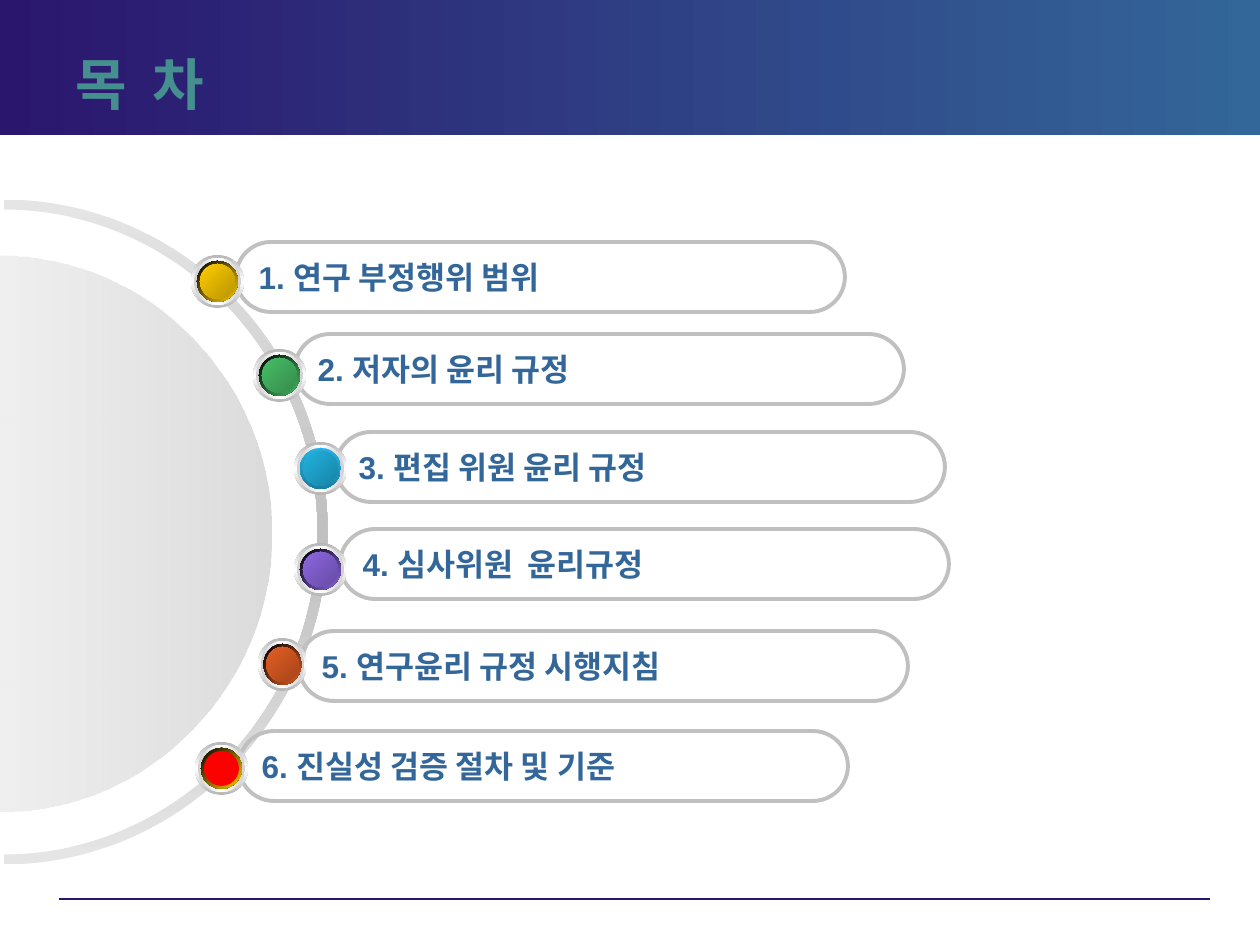
import pptx
import pptx.dml.color
import pptx.enum.shapes
import pptx.enum.text
import pptx.oxml
import pptx.oxml.ns
import pptx.util

PX = 914400 // 126
KIND = pptx.enum.shapes.MSO_SHAPE
SPACE = pptx.oxml.ns.nsdecls("a")
CURVE = 0.55

TITLE = "목  차"
# text, pill left and top, ball left, top and width, light and dark colour
ITEMS = [
    ("1. 연구 부정행위 범위", (236, 242), (191, 255, 53), "FFCC00", "BA9500"),
    ("2. 저자의 윤리 규정", (295, 334), (253, 349, 53), "48BE67", "358B4B"),
    ("3. 편집 위원 윤리 규정", (336, 432), (294, 442, 53), "21B3E1", "1883A4"),
    ("4. 심사위원  윤리규정", (340, 529), (294, 543, 53), "8D67E1", "674BA4"),
    ("5. 연구윤리 규정 시행지침", (299, 631), (258, 638, 49), "E35E23", "A6451A"),
    ("6. 진실성 검증 절차 및 기준", (239, 731), (195, 742, 53), "FFCC00", None),
]
PILL = (609, 70)
BALL = 53
# inset, stops, angle of the layers that all balls share
METAL = [
    (0, ["B6B6B6", "FFFFFF", "B6B6B6"], 90),
    (3, ["D1D1D1", "FFFFFF", "D1D1D1"], 0),
    (6, ["FFFFFF", "9999FF", "FFFFFF"], 45),
]
GLOW = (9, ["7575C3", "9999FF", "7575C3"], 315)


def rgb(code):
    return pptx.dml.color.RGBColor.from_string(code)


def paint(shape, stops, angle=0):
    """Fill with one colour, or with even stops ("colour/opacity") turned clockwise."""
    shape.shadow.inherit = False
    shape.line.fill.background()
    if len(stops) == 1:
        shape.fill.solid()
        shape.fill.fore_color.rgb = rgb(stops[0])
        return
    shape.fill.gradient()
    shape.fill.gradient_angle = (360 - angle) % 360
    held = shape._element.spPr.find(".//" + pptx.oxml.ns.qn("a:gsLst"))
    for old in list(held):
        held.remove(old)
    for i, stop in enumerate(stops):
        code, _, part = stop.partition("/")
        alpha = f'<a:alpha val="{part}000"/>' if part else ""
        pos = 100000 * i // (len(stops) - 1)
        held.append(pptx.oxml.parse_xml(
            f'<a:gs {SPACE} pos="{pos}"><a:srgbClr val="{code}">{alpha}</a:srgbClr></a:gs>'))


def place(shapes, kind, left, top, width, height):
    return shapes.add_shape(kind, *(round(n * PX) for n in (left, top, width, height)))


def write(shape, text, size, font, color, wrap):
    frame = shape.text_frame
    frame.text = text
    frame.word_wrap = wrap
    frame.vertical_anchor = pptx.enum.text.MSO_ANCHOR.MIDDLE
    para = frame.paragraphs[0]
    para.alignment = pptx.enum.text.PP_ALIGN.LEFT
    for run in para.runs:
        run.font.size = pptx.util.Pt(size)
        run.font.bold = True
        run.font.name = font
        run.font.color.rgb = rgb(color)


def bend(start, end, base):
    """A quarter ellipse that leaves the base line upright and meets the top level."""
    (ax, ay), (bx, by) = start, end
    dx, dy = (bx - ax) * CURVE, (by - ay) * CURVE
    if ay == base:
        points = [(ax, ay + dy), (bx - dx, by), end]
    else:
        points = [(ax + dx, ay), (bx, by - dy), end]
    marks = "".join(f'<a:pt x="{round(x)}" y="{round(y)}"/>' for x, y in points)
    return pptx.oxml.parse_xml(f"<a:cubicBezTo {SPACE}>{marks}</a:cubicBezTo>")


def add_arch(shapes, left, top, width, height, base, thick=None):
    """An arch in the upper part of its frame, turned to face right."""
    mid = width // 2
    points = [(0, base), (mid, 0), (width, base)]
    if thick:
        points += [(width - thick, base), (mid, thick), (thick, base)]
    maker = shapes.build_freeform(*points[0], scale=PX)
    maker.add_line_segments(points[1:], close=True)
    arch = maker.convert_to_shape()
    track = arch._element.spPr.find(".//" + pptx.oxml.ns.qn("a:path"))
    track.set("h", str(height))
    sides = track.findall(pptx.oxml.ns.qn("a:lnTo"))
    for side, start, end in zip(sides, points, points[1:]):
        if start[1] != end[1]:
            track.replace(side, bend(start, end, base))
    arch.left, arch.top, arch.width, arch.height = (
        n * PX for n in (left, top, width, height))
    arch.rotation = 90
    return arch


def add_pill(shapes, text, left, top):
    pill = place(shapes, KIND.ROUNDED_RECTANGLE, left, top, *PILL)
    pill.adjustments[0] = 0.5
    pill.shadow.inherit = False
    pill.fill.background()
    pill.line.color.rgb = rgb("C0C0C0")
    pill.line.width = pptx.util.Pt(2.25)
    write(pill, text, 18, "Arial", "336699", False)


def add_ball(shapes, left, top, width, light, dark):
    rim = (6, ["21B3E1", "1880A1"], 90) if light == "21B3E1" else (6, ["000000", light], 45)
    core = [GLOW, (9, [light, dark], 45)] if dark else [(9, ["FF0000"], 0)]
    group = shapes.add_group_shape()
    ratio = width / BALL
    for inset, stops, angle in METAL + [rim] + core:
        side = BALL - 2 * inset
        disc = place(group.shapes, KIND.OVAL, left + inset * ratio, top + inset,
                     side * ratio, side)
        paint(disc, stops, angle)


def main():
    deck = pptx.Presentation()
    deck.slide_width, deck.slide_height = 1260 * PX, 945 * PX
    shapes = deck.slides.add_slide(deck.slide_layouts[6]).shapes

    rule = shapes.add_connector(pptx.enum.shapes.MSO_CONNECTOR.STRAIGHT,
                                59 * PX, 899 * PX, 1210 * PX, 899 * PX)
    rule.line.color.rgb = rgb("2B166E")
    rule.line.width = pptx.util.Pt(0.75)
    rule._element.spPr.append(pptx.oxml.parse_xml(f"<a:effectLst {SPACE}/>"))

    band = place(shapes, KIND.RECTANGLE, 0, 0, 1260, 135)
    paint(band, ["2B166E", "336699"])
    title = shapes.add_textbox(63 * PX, 44 * PX, 850 * PX, 78 * PX)
    write(title, TITLE, 32, "Noto Sans CJK KR", "458F8F", True)

    ring = add_arch(shapes, -334, 203, 665, 658, 324, 10)
    paint(ring, ["E5E5E5", "C0C0C0", "E5E5E5"])
    dome = add_arch(shapes, -278, 263, 556, 542, 271)
    paint(dome, ["C0C0C0/56", "FFFFFF/48"], 90)

    for text, pill, *_ in ITEMS[4::-1] + ITEMS[5:]:
        add_pill(shapes, text, *pill)
    for _, _, ball, light, dark in ITEMS:
        add_ball(shapes, *ball, light, dark)

    deck.save("out.pptx")


if __name__ == "__main__":
    main()
